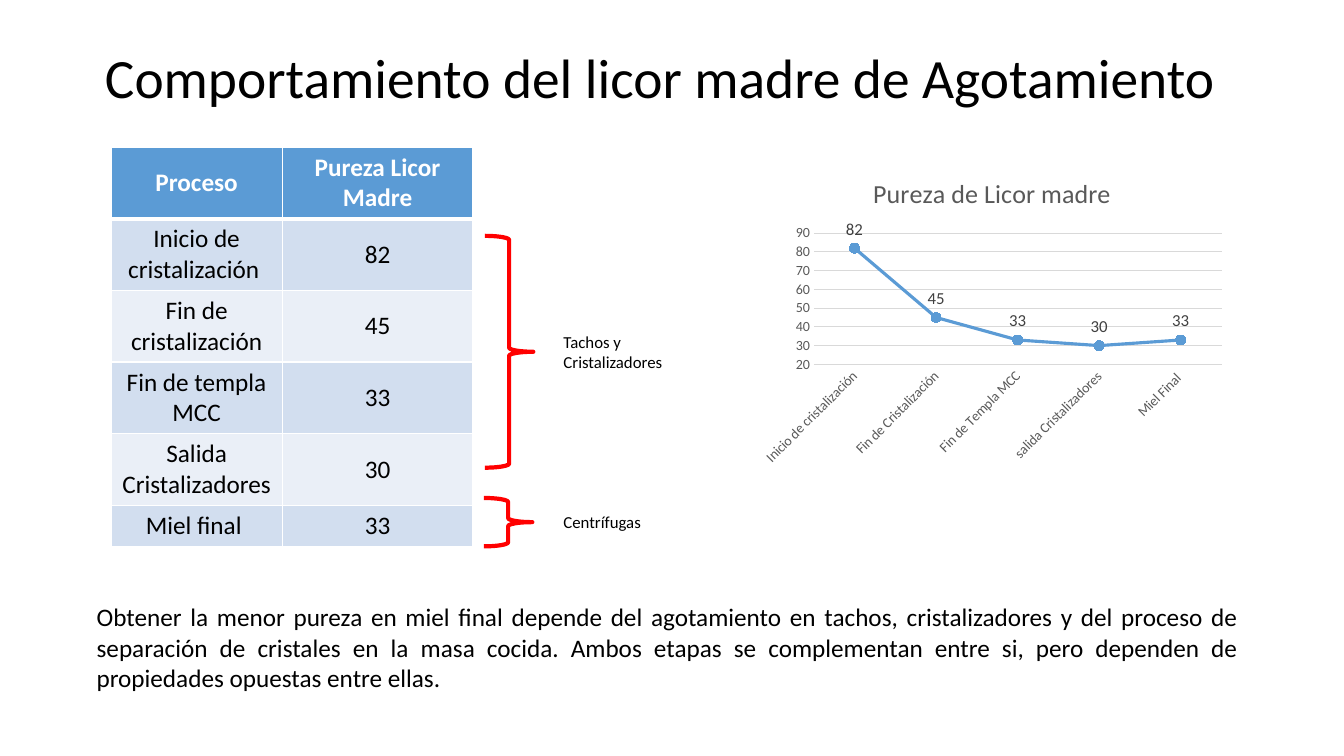
"""Build a slide on mother liquor purity with a table, braces and a line chart."""
from lxml.etree import SubElement
from pptx import Presentation
from pptx.chart.data import CategoryChartData
from pptx.dml.color import RGBColor
from pptx.enum.chart import XL_CHART_TYPE, XL_LABEL_POSITION, XL_MARKER_STYLE, XL_TICK_MARK
from pptx.enum.shapes import MSO_SHAPE
from pptx.enum.text import MSO_ANCHOR, MSO_AUTO_SIZE, PP_ALIGN
from pptx.oxml import parse_xml
from pptx.oxml.ns import nsdecls
from pptx.util import Pt

PX = 9144
FONT = "Calibri"
BLUE, RED, GRAY, GRID = "5B9BD5", "FF0000", "595959", "D9D9D9"


def color(hex_string):
    return RGBColor.from_string(hex_string)


def write(frame, text, size=18, fill="000000", bold=False, align=PP_ALIGN.LEFT, spacing=1.0):
    paragraph = frame.paragraphs[0]
    paragraph.alignment = align
    paragraph.line_spacing = spacing
    run = paragraph.add_run()
    run.text = text
    run.font.name = FONT
    run.font.size = Pt(size)
    run.font.bold = bold
    run.font.color.rgb = color(fill)


presentation = Presentation()
presentation.slide_width = 1333 * PX
presentation.slide_height = 750 * PX
slide = presentation.slides.add_slide(presentation.slide_layouts[5])

title = slide.shapes.title
title.left, title.top, title.width, title.height = 92 * PX, 40 * PX, 1150 * PX, 79 * PX
title.text_frame.vertical_anchor = MSO_ANCHOR.MIDDLE
title.text_frame.auto_size = MSO_AUTO_SIZE.NONE
title.text_frame.margin_right = 35 * PX
write(title.text_frame, "Comportamiento del licor madre de Agotamiento", size=39.6,
      align=PP_ALIGN.CENTER, spacing=0.9)

rows = [
    ("Proceso", "Pureza Licor Madre"),
    ("Inicio de cristalización ", "82"),
    ("Fin de cristalización", "45"),
    ("Fin de templa MCC", "33"),
    ("Salida Cristalizadores ", "30"),
    ("Miel final ", "33"),
]
row_heights = [70] * 5 + [41]
table = slide.shapes.add_table(len(rows), 2, 110 * PX, 146 * PX, 359 * PX, 391 * PX).table
table.columns[0].width = 170 * PX
table.columns[1].width = 189 * PX
for row_index, row in enumerate(rows):
    table.rows[row_index].height = row_heights[row_index] * PX
    header = row_index == 0
    row_fill = BLUE if header else ("EAEFF7", "D2DEEF")[row_index % 2]
    border_widths = {"L": 1, "R": 1, "T": 3 if row_index == 1 else 1, "B": 3 if header else 1}
    for column_index, text in enumerate(row):
        cell = table.cell(row_index, column_index)
        cell.vertical_anchor = MSO_ANCHOR.MIDDLE
        cell.fill.solid()
        cell.fill.fore_color.rgb = color(row_fill)
        write(cell.text_frame, text, fill="FFFFFF" if header else "000000", bold=header,
              align=PP_ALIGN.CENTER)
        properties = cell._tc.get_or_add_tcPr()
        for position, (side, width) in enumerate(border_widths.items()):
            properties.insert(position, parse_xml(
                f'<a:ln{side} {nsdecls("a")} w="{Pt(width)}"><a:solidFill>'
                f'<a:srgbClr val="FFFFFF"/></a:solidFill></a:ln{side}>'))

chart_data = CategoryChartData()
chart_data.categories = ["Inicio de cristalización", "Fin de Cristalización",
                         "Fin de Templa MCC", "salida Cristalizadores", "Miel Final "]
chart_data.add_series("Pureza de Licor madre", [82, 45, 33, 30, 33])
chart = slide.shapes.add_chart(XL_CHART_TYPE.LINE_MARKERS, 747 * PX, 158 * PX,
                               474 * PX, 310 * PX, chart_data).chart
chart.has_legend = False
chart.font.name = FONT
chart.font.size = Pt(10)
chart.has_title = True
write(chart.chart_title.text_frame, "Pureza de Licor madre", size=18.6, fill=GRAY,
      align=PP_ALIGN.CENTER)
chart.chart_title.include_in_layout = False

for axis in (chart.category_axis, chart.value_axis):
    axis.major_tick_mark = XL_TICK_MARK.NONE
    axis.minor_tick_mark = XL_TICK_MARK.NONE
    axis.tick_labels.font.name = FONT
    axis.tick_labels.font.size = Pt(10)
    axis.tick_labels.font.color.rgb = color(GRAY)
chart.category_axis.format.line.color.rgb = color(GRID)
chart.category_axis.format.line.width = Pt(0.75)
label_body = chart.category_axis._element.txPr.bodyPr
label_body.set("rot", "-2700000")
label_body.set("vert", "horz")
value_axis = chart.value_axis
value_axis.minimum_scale = 20
value_axis.maximum_scale = 90
value_axis.major_unit = 10
value_axis.format.line.fill.background()
value_axis.major_gridlines.format.line.color.rgb = color(GRID)
value_axis.major_gridlines.format.line.width = Pt(0.75)

plot = chart.plots[0]
plot.vary_by_categories = False
series = plot.series[0]
series.smooth = False
series.format.line.color.rgb = color(BLUE)
series.format.line.width = Pt(2.25)
series.marker.style = XL_MARKER_STYLE.CIRCLE
series.marker.size = 7
series.marker.format.fill.solid()
series.marker.format.fill.fore_color.rgb = color(BLUE)
series.marker.format.line.color.rgb = color(BLUE)
labels = series.data_labels
labels.show_value = True
labels.position = XL_LABEL_POSITION.ABOVE
labels.font.name = FONT
labels.font.size = Pt(12)
labels.font.color.rgb = color("404040")

for left, top, height in ((481, 234, 230), (480, 494, 48)):
    brace = slide.shapes.add_shape(MSO_SHAPE.RIGHT_BRACE, left * PX, top * PX, 48 * PX, height * PX)
    brace.shadow.inherit = False
    brace.fill.background()
    brace.line.color.rgb = color(RED)
    brace.line.width = Pt(3)

conclusion = ("Obtener la menor pureza en miel final depende del agotamiento en tachos, "
              "cristalizadores y del proceso de separación de cristales en la masa cocida. "
              "Ambos etapas se complementan entre si, pero dependen de propiedades opuestas "
              "entre ellas.")
texts = [
    (549, 324, 159, 50, "Tachos y Cristalizadores", 12, PP_ALIGN.LEFT),
    (549, 503, 159, 30, "Centrífugas", 12, PP_ALIGN.LEFT),
    (86, 592, 1152, 101, conclusion, 18, PP_ALIGN.JUSTIFY),
]
for left, top, width, height, text, size, align in texts:
    box = slide.shapes.add_textbox(left * PX, top * PX, width * PX, height * PX)
    box.text_frame.word_wrap = True
    box.text_frame.auto_size = MSO_AUTO_SIZE.SHAPE_TO_FIT_TEXT
    write(box.text_frame, text, size=size, align=align)

presentation.save("out.pptx")
